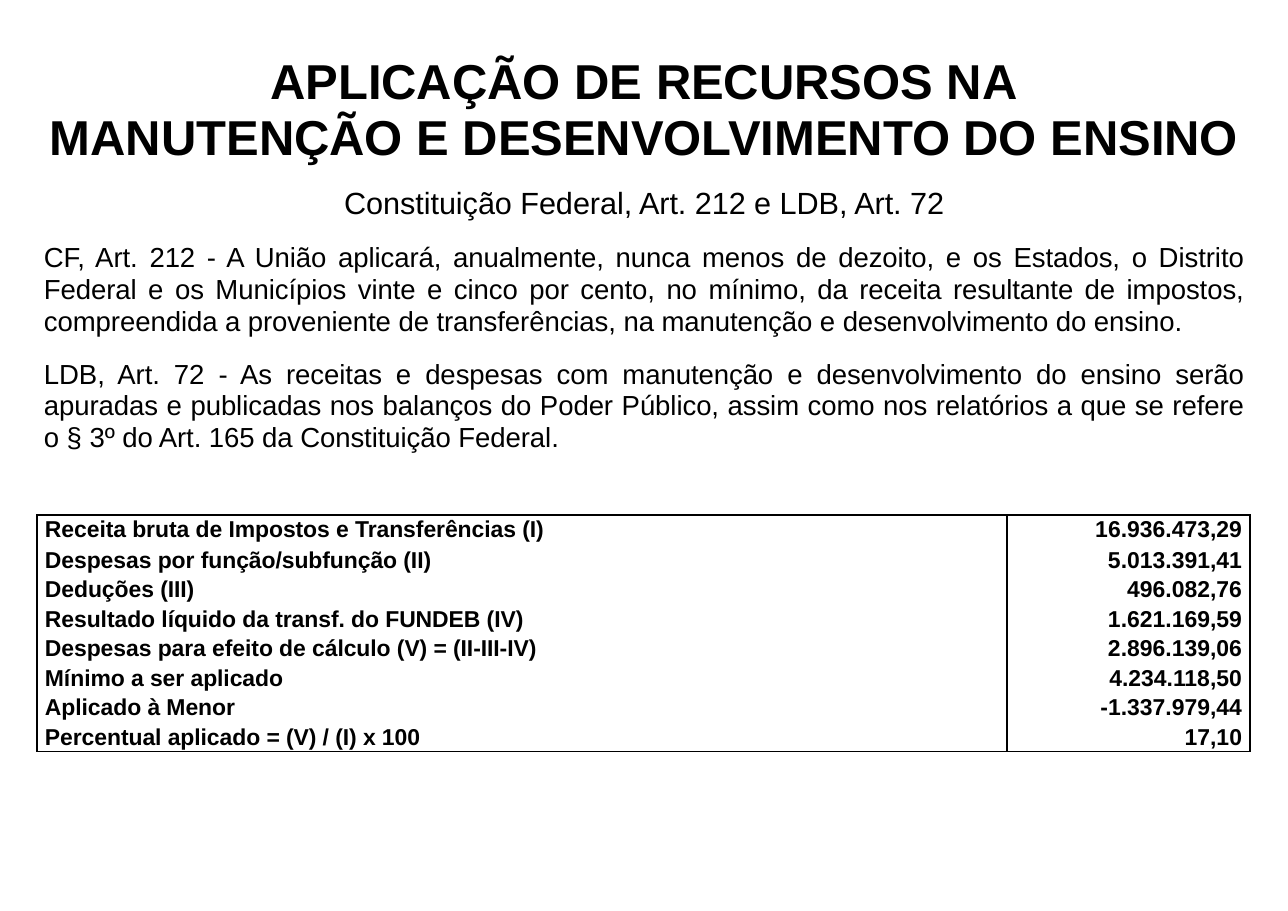
from dataclasses import dataclass

import lxml.etree
import pptx
import pptx.dml.color
import pptx.enum.text
import pptx.oxml.ns
import pptx.util

PX = 8298  # EMU per px
FONT = "Arial"
INK = {"text": "000000", "line": "000000", "paper": "FFFFFF"}
ALIGN = pptx.enum.text.PP_ALIGN
Pt = pptx.util.Pt


@dataclass
class Row:
    label: str
    value: str


ROWS = [
    Row("Receita bruta de Impostos e Transferências (I)", "16.936.473,29"),
    Row("Despesas por função/subfunção (II)", "5.013.391,41"),
    Row("Deduções (III)", "496.082,76"),
    Row("Resultado líquido da transf. do FUNDEB (IV)", "1.621.169,59"),
    Row("Despesas para efeito de cálculo (V) = (II-III-IV)", "2.896.139,06"),
    Row("Mínimo a ser aplicado", "4.234.118,50"),
    Row("Aplicado à Menor", "-1.337.979,44"),
    Row("Percentual aplicado = (V) / (I) x 100", "17,10"),
]
LAWS = [
    "CF, Art. 212 - A União aplicará, anualmente, nunca menos de dezoito, e os Estados, "
    "o Distrito Federal e os Municípios vinte e cinco por cento, no mínimo, da receita "
    "resultante de impostos, compreendida a proveniente de transferências, na manutenção "
    "e desenvolvimento do ensino.",
    "LDB, Art. 72 - As receitas e despesas com manutenção e desenvolvimento do ensino "
    "serão apuradas e publicadas nos balanços do Poder Público, assim como nos relatórios "
    "a que se refere o § 3º do Art. 165 da Constituição Federal.",
]


def px(n: int) -> int:
    return n * PX


def color(name: str) -> pptx.dml.color.RGBColor:
    return pptx.dml.color.RGBColor.from_string(INK[name])


def write(para, text: str, *, size: int, bold: bool = False, align=ALIGN.LEFT,
          before: float = 0, line=None, track: int = -5) -> None:
    """Fill a paragraph; a newline in the text becomes a line break."""
    para.alignment = align
    para.space_before = Pt(before)
    if line:
        para.line_spacing = line
    for i, part in enumerate(text.split("\n")):
        if i:
            para.add_line_break()
        run = para.add_run()
        run.text = part
        run.font.name, run.font.size, run.font.bold = FONT, Pt(size), bold
        run.font.color.rgb = color("text")
        run._r.get_or_add_rPr().set("spc", str(track))


def box(slide, x: int, y: int, w: int, h: int, top: int):
    frame = slide.shapes.add_textbox(px(x), px(y), px(w), px(h)).text_frame
    frame.word_wrap = True
    frame.margin_left = frame.margin_right = frame.margin_bottom = 0
    frame.margin_top = px(top)
    return frame


def edge(cell, sides: str) -> None:
    """Draw the named sides of a cell and clear the others."""
    props = cell._tc.get_or_add_tcPr()
    qn = pptx.oxml.ns.qn
    for side in "LRTB":
        ln = lxml.etree.SubElement(props, qn(f"a:ln{side}"), w=str(Pt(1)))
        if side in sides:
            fill = lxml.etree.SubElement(ln, qn("a:solidFill"))
            lxml.etree.SubElement(fill, qn("a:srgbClr"), val=INK["line"])
        else:
            lxml.etree.SubElement(ln, qn("a:noFill"))


def grid(slide, rows: list[Row]) -> None:
    wide = (970, 243)
    high = [30 - i % 2 + (i == 0) for i in range(len(rows))]
    table = slide.shapes.add_table(len(rows), 2, px(37), px(515),
                                   px(sum(wide)), px(sum(high))).table
    table.first_row = table.horz_banding = False
    for col, w in zip(table.columns, wide):
        col.width = px(w)
    for i, row in enumerate(rows):
        table.rows[i].height = px(high[i])
        sides = "LR" + "T" * (i == 0) + "B" * (i == len(rows) - 1)
        cells = ((row.label, ALIGN.LEFT, -5), (row.value, ALIGN.RIGHT, 0))
        for j, (text, align, track) in enumerate(cells):
            cell = table.cell(i, j)
            cell.margin_left = cell.margin_right = px(8)
            cell.margin_top = cell.margin_bottom = 0
            edge(cell, sides)
            cell.fill.solid()
            cell.fill.fore_color.rgb = color("paper")
            write(cell.text_frame.paragraphs[0], text, size=15, bold=True,
                  align=align, line=Pt(17.8), track=track)


def main() -> None:
    deck = pptx.Presentation()
    deck.slide_width, deck.slide_height = px(1288), px(911)
    slide = deck.slides.add_slide(deck.slide_layouts[6])

    # Title
    title = box(slide, 45, 47, 1198, 118, top=6)
    write(title.paragraphs[0], "APLICAÇÃO DE RECURSOS NA\nMANUTENÇÃO E DESENVOLVIMENTO DO ENSINO",
          size=32, bold=True, align=ALIGN.CENTER, before=3.6, line=Pt(36.8))

    # Legal basis
    body = box(slide, 44, 183, 1200, 273, top=1)
    write(body.paragraphs[0], "Constituição Federal, Art. 212 e LDB, Art. 72",
          size=20, align=ALIGN.CENTER, before=1.1)
    for law in LAWS:
        write(body.add_paragraph(), law, size=18, align=ALIGN.JUSTIFY, before=14, line=0.96)

    # Results
    grid(slide, ROWS)
    deck.save("out.pptx")


if __name__ == "__main__":
    main()
